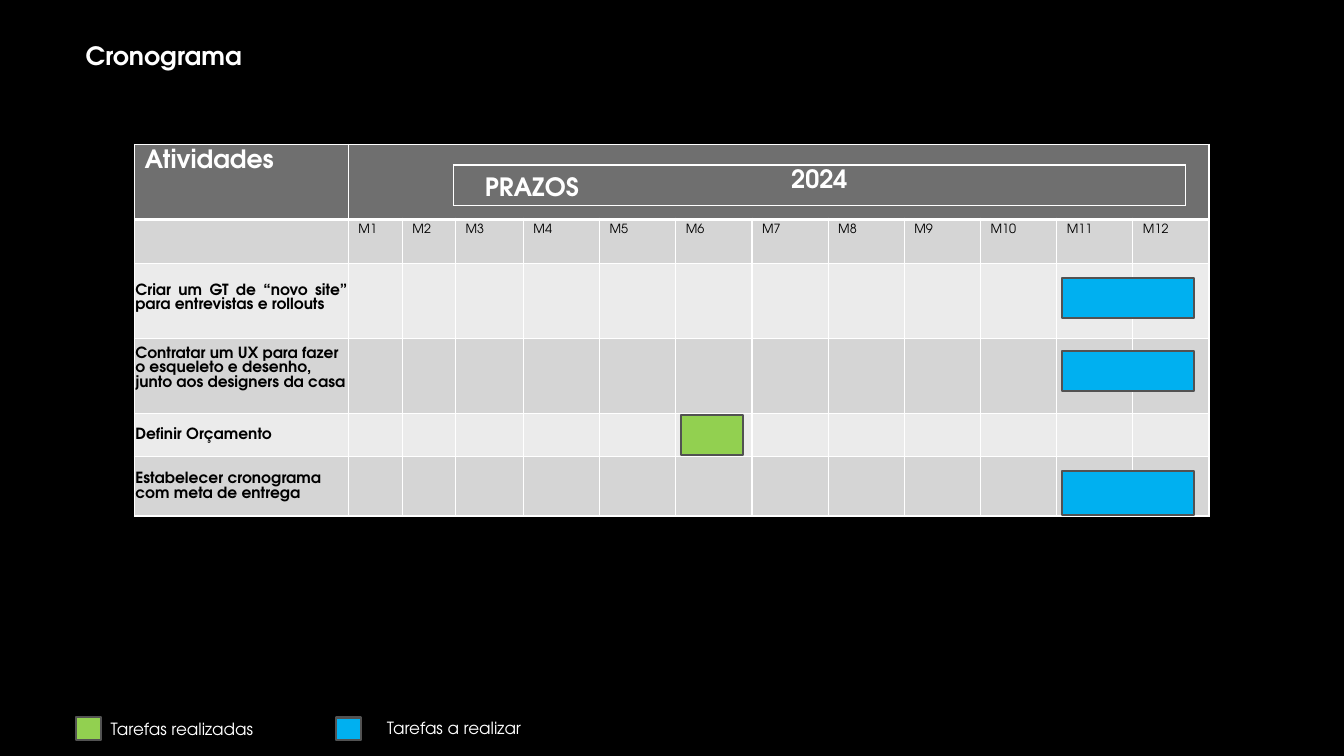
from lxml import etree
from pptx import Presentation
from pptx.dml.color import RGBColor
from pptx.enum.shapes import MSO_SHAPE
from pptx.enum.text import MSO_ANCHOR, PP_ALIGN
from pptx.oxml.ns import qn
from pptx.util import Cm, Pt

RECT = MSO_SHAPE.RECTANGLE
MIDDLE = MSO_ANCHOR.MIDDLE
CENTER = PP_ALIGN.CENTER
JUSTIFY = PP_ALIGN.JUSTIFY
FONT = "TeX Gyre Adventor"
GREEN, BLUE, WHITE, BLACK = "92D050", "00B0F0", "FFFFFF", "000000"


def rgb(value):
    return RGBColor.from_string(value)


def write(tf, text, size, color, bold):
    p = tf.paragraphs[0]
    p.text = text
    p.font.name = FONT
    p.font.size = Pt(size)
    p.font.bold = bold
    p.font.color.rgb = rgb(color)
    return p


prs = Presentation()
prs.slide_width, prs.slide_height = Cm(33.87), Cm(19.05)
s = prs.slides.add_slide(prs.slide_layouts[6])
s.background.fill.solid()
s.background.fill.fore_color.rgb = rgb(BLACK)

col_widths = [5.39, 1.36, 1.34, 1.71] + [1.92] * 9
row_heights = [1.89, 1.11, 1.89, 1.89, 1.09, 1.49]
row_fills = ["6F6F6F", "D5D5D5", "EBEBEB", "D5D5D5", "EBEBEB", "D5D5D5"]
activities = [
    ("Criar um GT de “novo site” para entrevistas e rollouts", 0.15),
    ("Contratar um UX para fazer o esqueleto e desenho, junto aos designers da casa", 0.4),
    ("Definir Orçamento", 0),
    ("Estabelecer cronograma com meta de entrega", 0),
]

schedule = s.shapes.add_table(6, 13, Cm(3.39), Cm(3.64), Cm(27.08), Cm(9.36)).table
year = s.shapes.add_table(1, 1, Cm(11.43), Cm(4.16), Cm(18.44), Cm(1.02)).table
for col, width in zip(schedule.columns, col_widths):
    col.width = Cm(width)
for row, height in zip(schedule.rows, row_heights):
    row.height = Cm(height)

for table in (schedule, year):
    table.first_row = False
    table.horz_banding = False
    for i, row in enumerate(table.rows):
        for cell in row.cells:
            tcPr = cell._tc.get_or_add_tcPr()
            for side in ("lnL", "lnR", "lnT", "lnB"):
                heavy = table is schedule and (i, side) in ((0, "lnB"), (1, "lnT"))
                ln = etree.SubElement(tcPr, qn(f"a:{side}"), w=str(Pt(3 if heavy else 1)))
                fill = etree.SubElement(ln, qn("a:solidFill"))
                etree.SubElement(fill, qn("a:srgbClr"), val=WHITE)
            if table is schedule:
                cell.fill.solid()
                cell.fill.fore_color.rgb = rgb(row_fills[i])
            else:
                cell.fill.background()

schedule.cell(0, 1).merge(schedule.cell(0, 12))
write(schedule.cell(0, 0).text_frame, "Atividades", 18, WHITE, True)
for month in range(1, 13):
    write(schedule.cell(1, month).text_frame, f"M{month}", 9, BLACK, False)
for i, (activity, bottom) in enumerate(activities):
    cell = schedule.cell(i + 2, 0)
    cell.vertical_anchor = MIDDLE
    cell.margin_left = cell.margin_right = cell.margin_top = Cm(0.02)
    cell.margin_bottom = Cm(bottom)
    p = write(cell.text_frame, activity, 11, BLACK, True)
    if i == 0:
        p.alignment = JUSTIFY
write(year.cell(0, 0).text_frame, "2024", 18, WHITE, True).alignment = CENTER

for text, x, y, w, h, size, bold in [
    ("Cronograma", 1.91, 0.89, 23.29, 1.02, 18, True),
    ("PRAZOS", 11.97, 4.19, 7.14, 1.02, 18, True),
    ("Tarefas realizadas", 2.54, 17.98, 5.51, 0.77, 12, False),
    ("Tarefas a realizar", 9.5, 17.96, 5.51, 0.77, 12, False),
]:
    tf = s.shapes.add_textbox(Cm(x), Cm(y), Cm(w), Cm(h)).text_frame
    tf.word_wrap = True
    write(tf, text, size, WHITE, bold)

for color, x, y, w, h in [
    (GREEN, 1.91, 18.06, 0.64, 0.58),
    (BLUE, 8.46, 18.08, 0.64, 0.58),
    (BLUE, 26.77, 7, 3.33, 1.02),
    (BLUE, 26.77, 8.84, 3.33, 1.02),
    (GREEN, 17.16, 10.45, 1.56, 1.02),
    (BLUE, 26.77, 11.88, 3.33, 1.09),
]:
    bar = s.shapes.add_shape(RECT, Cm(x), Cm(y), Cm(w), Cm(h))
    bar.shadow.inherit = False
    bar.fill.solid()
    bar.fill.fore_color.rgb = rgb(color)
    bar.line.color.rgb = rgb("525252")
    bar.line.width = Pt(1.5)

prs.save("out.pptx")
